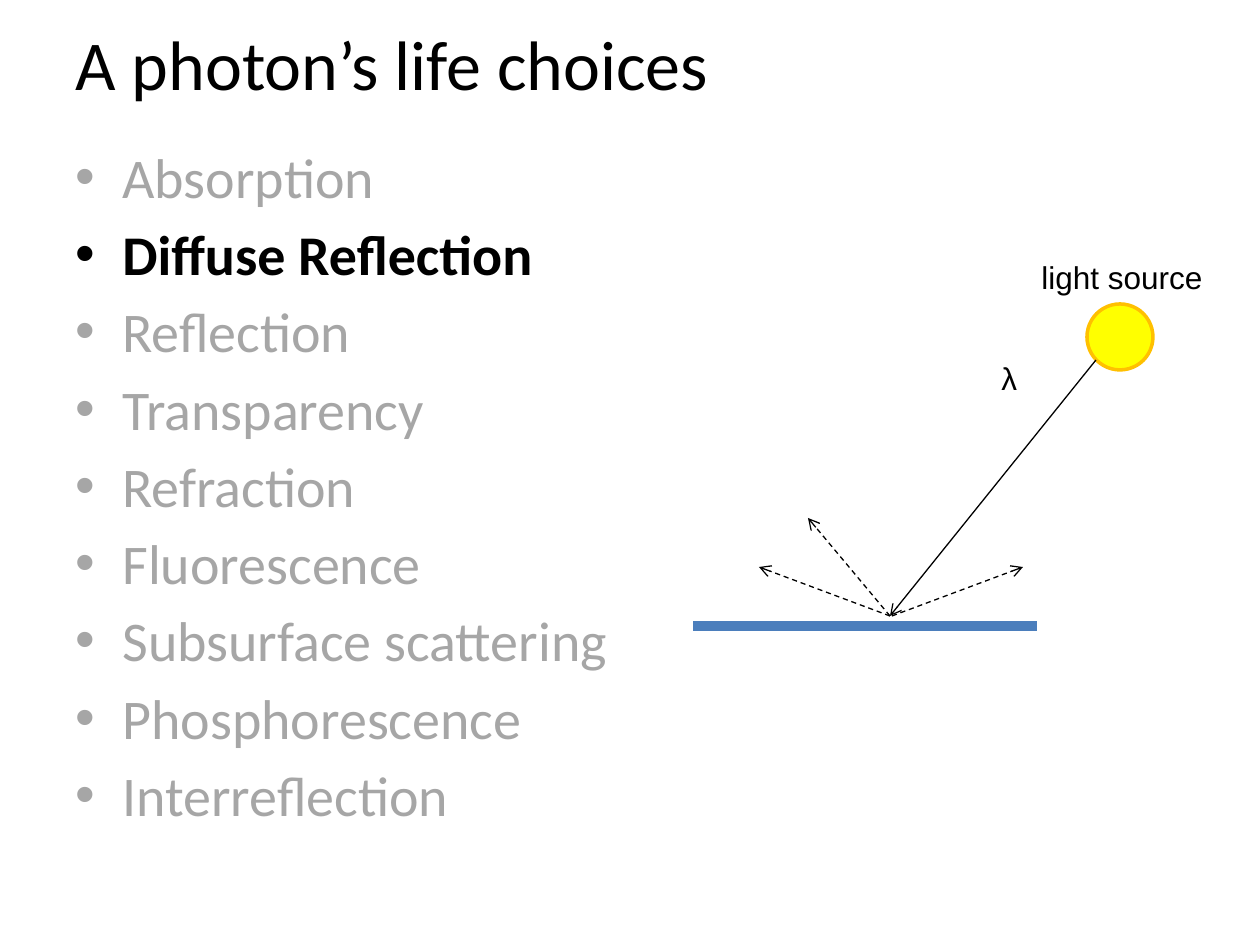
from lxml import etree
from pptx import Presentation
from pptx import util as u
from pptx.dml.color import RGBColor
from pptx.enum import dml, shapes, text
from pptx.oxml.ns import qn

SCALE = 914400 / 126
CHOICES = ["Absorption", "Diffuse Reflection", "Reflection", "Transparency", "Refraction",
           "Fluorescence", "Subsurface scattering", "Phosphorescence", "Interreflection"]
CURRENT = "Diffuse Reflection"
SCATTERED = [((890, 616), (808, 518)), ((890, 616), (759, 567)), ((892, 616), (1023, 567))]


def px(*lengths):
    """Turn pixel lengths into EMU."""
    return [u.Emu(round(n * SCALE)) for n in lengths]


def paint(color_format, color):
    """Apply a hex colour to a colour format."""
    color_format.rgb = RGBColor.from_string(color)


def style(p, size, font, color="000000", bold=False):
    """Format every run of a paragraph."""
    for r in p.runs:
        r.font.size, r.font.name, r.font.bold = u.Pt(size), font, bold
        paint(r.font.color, color)


def add_title(s, words):
    """Place and format the title placeholder."""
    sp = s.shapes.title
    sp.left, sp.top, sp.width, sp.height = px(63, 0, 1134, 126)
    tf = sp.text_frame
    tf.text = words
    tf.vertical_anchor = text.MSO_ANCHOR.MIDDLE
    tf.paragraphs[0].alignment = text.PP_ALIGN.LEFT
    style(tf.paragraphs[0], 40, "Calibri")


def add_bullet(p):
    """Give a paragraph a hanging round bullet."""
    pPr = p._p.get_or_add_pPr()
    indent = px(47)[0]
    pPr.set("marL", str(indent))
    pPr.set("indent", str(-indent))
    etree.SubElement(pPr, qn("a:buFont")).set("typeface", "Arial")
    etree.SubElement(pPr, qn("a:buChar")).set("char", "•")


def add_choices(s):
    """List the choices with the current one emphasised."""
    tf = s.shapes.add_textbox(*px(63, 136, 1134, 708)).text_frame
    tf.word_wrap = True
    tf.text = "\n".join(CHOICES)
    for p in tf.paragraphs:
        current = p.text == CURRENT
        p.space_before = u.Pt(5.75)
        add_bullet(p)
        style(p, 32, "Calibri", "000000" if current else "A6A6A6", current)


def add_label(s, words, box, wrap):
    """Add a diagram label."""
    tf = s.shapes.add_textbox(*px(*box)).text_frame
    tf.word_wrap = wrap
    tf.auto_size = text.MSO_AUTO_SIZE.SHAPE_TO_FIT_TEXT
    tf.text = words
    style(tf.paragraphs[0], 18, "Arial")


def add_line(s, start, end, color="000000", width=0.75, dashed=False, arrow=True):
    """Draw a straight line with an optional arrowhead."""
    c = s.shapes.add_connector(shapes.MSO_CONNECTOR.STRAIGHT, *px(*start, *end))
    paint(c.line.color, color)
    c.line.width = u.Pt(width)
    if dashed:
        c.line.dash_style = dml.MSO_LINE.DASH
    spPr = c.element.spPr
    if arrow:
        etree.SubElement(spPr.find(qn("a:ln")), qn("a:tailEnd")).set("type", "arrow")
    etree.SubElement(spPr, qn("a:effectLst"))


def add_light(s):
    """Draw the light source."""
    sp = s.shapes.add_shape(shapes.MSO_SHAPE.OVAL, *px(1087, 304, 66, 66))
    sp.shadow.inherit = False
    sp.fill.solid()
    paint(sp.fill.fore_color, "FFFF00")
    paint(sp.line.color, "FFC000")
    sp.line.width = u.Pt(2)


def main():
    """Build and save the slide."""
    prs = Presentation()
    prs.slide_width, prs.slide_height = px(1260, 945)
    s = prs.slides.add_slide(prs.slide_layouts[5])
    add_title(s, "A photon’s life choices")
    add_choices(s)
    add_line(s, (693, 626), (1037, 626), "4B7EBC", 6, arrow=False)
    add_light(s)
    add_line(s, (1096, 360), (890, 616))
    add_label(s, "λ", (989, 353, 64, 79), False)
    add_label(s, "light source", (1029, 252, 189, 53), True)
    for start, end in SCATTERED:
        add_line(s, start, end, dashed=True)
    prs.save("out.pptx")


if __name__ == "__main__":
    main()
